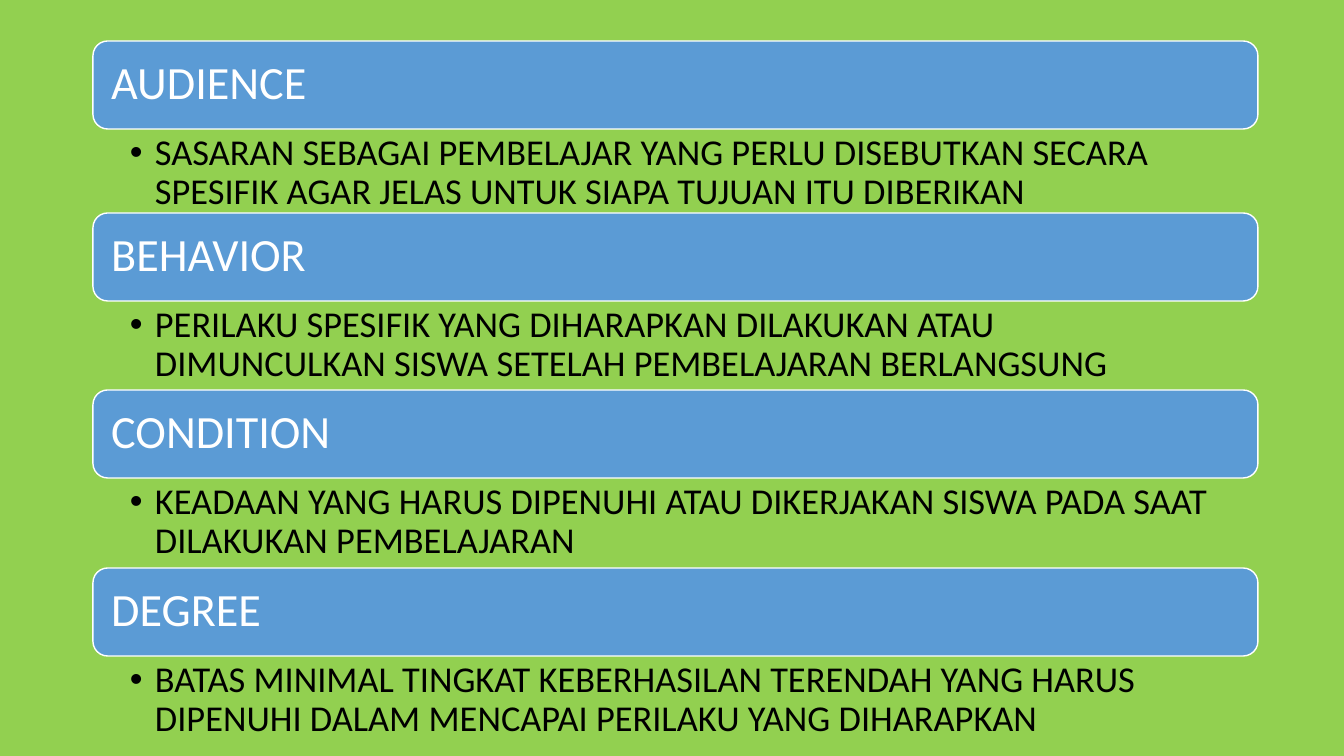
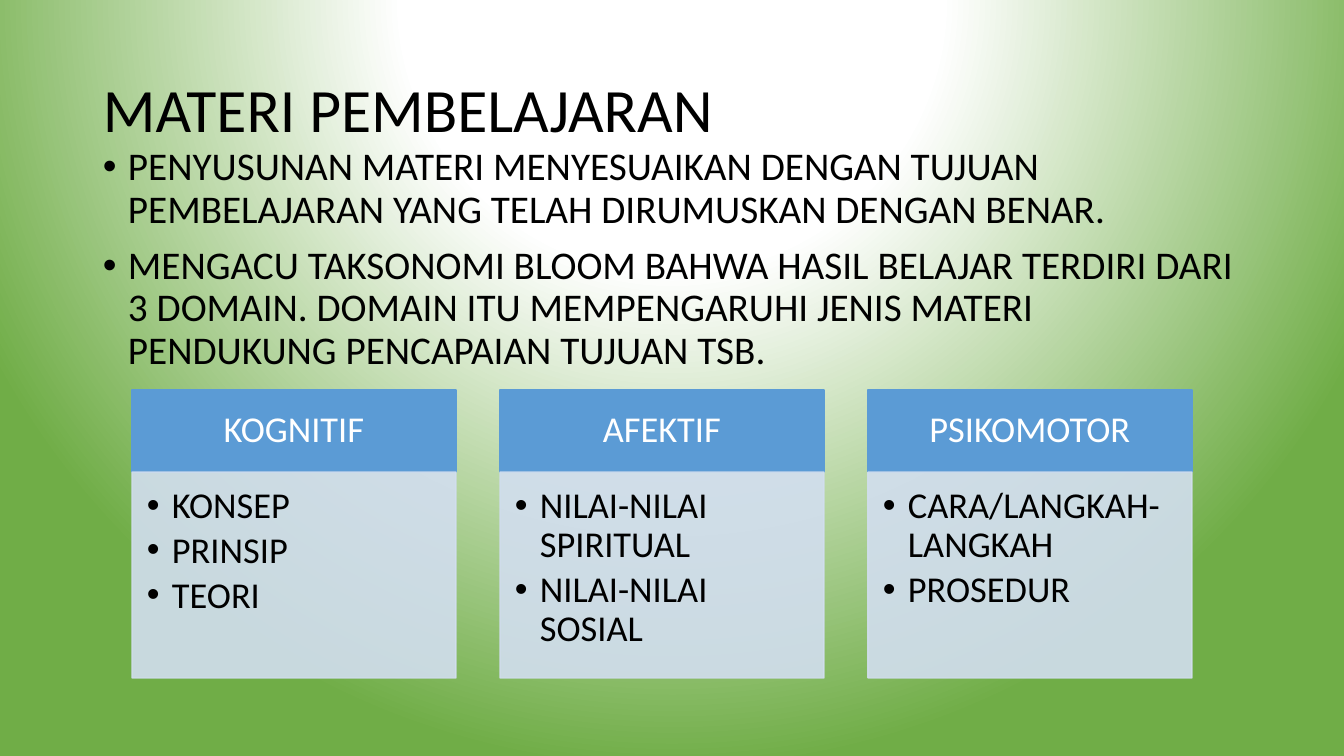
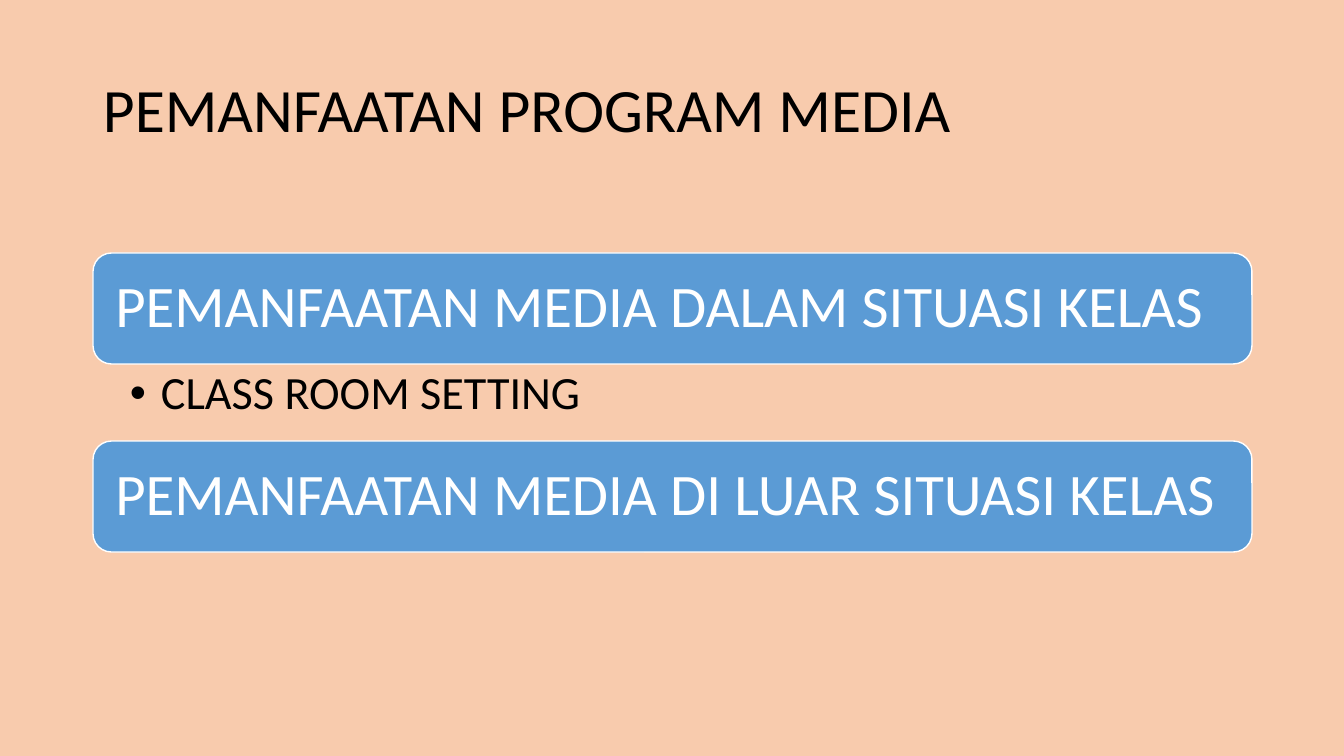
from lxml import etree
from pptx import Presentation
from pptx import util as u
from pptx.dml import color as c
from pptx.enum import shapes, text
from pptx.oxml import ns


class Theme:
    font = "Calibri"
    black = "000000"
    white = "FFFFFF"
    blue = "5B9BD5"
    pale_blue = "D2DEEF"
    lime = "92D050"
    green = "70AD47"
    peach = "F8CBAD"
    title_size = 44
    body_size = 28
    card_size = 26
    bar_size = 33
    large_bar_size = 42


def px(value):
    return u.Emu(round(value * 914400 / 100.8))


def write(shape, box, lines, size, color=Theme.black, fill=None, line=None, opacity=100,
          align=text.PP_ALIGN.LEFT, anchor=text.MSO_ANCHOR.TOP, insets=(10, 5, 10, 5),
          indent=0, before=0, after=0):
    shape.left, shape.top, shape.width, shape.height = map(px, box)
    if fill:
        shape.shadow.inherit = False
        shape.fill.solid()
        shape.fill.fore_color.rgb = c.RGBColor.from_string(fill)
        shape.line.color.rgb = c.RGBColor.from_string(line)
        shape.line.width = u.Pt(1)
        if opacity < 100:
            for color_element in shape.element.spPr.iter(ns.qn("a:srgbClr")):
                etree.SubElement(color_element, ns.qn("a:alpha"), val=str(opacity * 1000))
    frame = shape.text_frame
    frame.text = "\n".join(lines)
    frame.word_wrap = True
    frame.auto_size = text.MSO_AUTO_SIZE.NONE
    frame.vertical_anchor = anchor
    frame.margin_left, frame.margin_top, frame.margin_right, frame.margin_bottom = map(px, insets)
    for paragraph in frame.paragraphs:
        paragraph.alignment = align
        paragraph.line_spacing = 0.9
        paragraph.space_before = u.Pt(before)
        paragraph.space_after = u.Pt(after)
        font = paragraph.runs[0].font
        font.name = Theme.font
        font.size = u.Pt(size)
        font.color.rgb = c.RGBColor.from_string(color)
        if indent:
            properties = paragraph._p.get_or_add_pPr()
            properties.set("marL", str(px(indent)))
            properties.set("indent", str(-px(indent)))
            etree.SubElement(properties, ns.qn("a:buFont"), typeface="Arial")
            etree.SubElement(properties, ns.qn("a:buChar"), char="•")


presentation = Presentation()
presentation.slide_width = px(1344)
presentation.slide_height = px(756)
layouts = presentation.slide_layouts
objectives, materials, media = [
    presentation.slides.add_slide(layouts.get_by_name(name))
    for name in ("Blank", "Title and Content", "Title Only")
]

for slide, color in ((objectives, Theme.lime), (media, Theme.peach)):
    slide.background.fill.solid()
    slide.background.fill.fore_color.rgb = c.RGBColor.from_string(color)

materials.background.fill.gradient()
gradient = next(materials.element.iter(ns.qn("a:gradFill")))
gradient.clear()
gradient.set("rotWithShape", "1")
stops = etree.SubElement(gradient, ns.qn("a:gsLst"))
for position, color in ((0, Theme.white), (35, Theme.white), (100, Theme.green)):
    stop = etree.SubElement(stops, ns.qn("a:gs"), pos=str(position * 1000))
    etree.SubElement(stop, ns.qn("a:srgbClr"), val=color)
circle = etree.SubElement(gradient, ns.qn("a:path"), path="circle")
etree.SubElement(circle, ns.qn("a:fillToRect"), l="50000", t="-80000", r="50000", b="180000")

for slide, title in ((materials, "MATERI PEMBELAJARAN"), (media, "PEMANFAATAN PROGRAM MEDIA")):
    write(slide.shapes.title, (93, 40, 1159, 146), [title], Theme.title_size,
          anchor=text.MSO_ANCHOR.MIDDLE)

objective_bars = [
    (41, "AUDIENCE", "SASARAN SEBAGAI PEMBELAJAR YANG PERLU DISEBUTKAN SECARA SPESIFIK AGAR JELAS UNTUK SIAPA TUJUAN ITU DIBERIKAN"),
    (213, "BEHAVIOR", "PERILAKU SPESIFIK YANG DIHARAPKAN DILAKUKAN ATAU DIMUNCULKAN SISWA SETELAH PEMBELAJARAN BERLANGSUNG"),
    (390, "CONDITION", "KEADAAN YANG HARUS DIPENUHI ATAU DIKERJAKAN SISWA PADA SAAT DILAKUKAN PEMBELAJARAN"),
    (568, "DEGREE", "BATAS MINIMAL TINGKAT KEBERHASILAN TERENDAH YANG HARUS DIPENUHI DALAM MENCAPAI PERILAKU YANG DIHARAPKAN"),
]
media_bars = [
    (253, "PEMANFAATAN MEDIA DALAM SITUASI KELAS", "CLASS ROOM SETTING"),
    (441, "PEMANFAATAN MEDIA DI LUAR SITUASI KELAS", None),
]
bar_groups = [
    (objectives, objective_bars, 1165, 88, 14, Theme.bar_size, 91, (37, 5, 26, 5), 25, Theme.card_size),
    (media, media_bars, 1159, 111, 17, Theme.large_bar_size, 77, (37, 6, 33, 6), 31, Theme.bar_size),
]
for slide, bars, width, height, inset, size, detail_height, detail_insets, indent, detail_size in bar_groups:
    for top, heading, detail in bars:
        bar = slide.shapes.add_shape(shapes.MSO_SHAPE.ROUNDED_RECTANGLE, 0, 0, 0, 0)
        write(bar, (93, top, width, height), [heading], size, Theme.white,
              fill=Theme.blue, line=Theme.white, anchor=text.MSO_ANCHOR.MIDDLE, insets=(inset,) * 4)
        if detail:
            write(slide.shapes.add_textbox(0, 0, 0, 0), (93, top + height, width, detail_height),
                  [detail], detail_size, insets=detail_insets, indent=indent)

write(materials.placeholders[1], (93, 142, 1159, 538), [
    "PENYUSUNAN MATERI MENYESUAIKAN DENGAN TUJUAN PEMBELAJARAN YANG TELAH DIRUMUSKAN DENGAN BENAR.",
    "MENGACU TAKSONOMI BLOOM BAHWA HASIL BELAJAR TERDIRI DARI 3 DOMAIN. DOMAIN ITU MEMPENGARUHI JENIS MATERI PENDUKUNG PENCAPAIAN TUJUAN TSB.",
], Theme.body_size, indent=25, before=10)

domains = [
    ("KOGNITIF", ["KONSEP", "PRINSIP", "TEORI"]),
    ("AFEKTIF", ["NILAI-NILAI SPIRITUAL", "NILAI-NILAI SOSIAL"]),
    ("PSIKOMOTOR", ["CARA/LANGKAH-LANGKAH", "PROSEDUR"]),
]
for index, (domain, topics) in enumerate(domains):
    left = 132 + index * 368
    header, card = [materials.shapes.add_shape(shapes.MSO_SHAPE.RECTANGLE, 0, 0, 0, 0) for _ in range(2)]
    write(header, (left, 390, 324, 82), [domain], Theme.card_size, Theme.white,
          fill=Theme.blue, line=Theme.blue, align=text.PP_ALIGN.CENTER,
          anchor=text.MSO_ANCHOR.MIDDLE, insets=(20, 12, 20, 12))
    write(card, (left, 472, 324, 206), topics, Theme.card_size,
          fill=Theme.pale_blue, line=Theme.pale_blue, opacity=90,
          insets=(15, 15, 20, 23), indent=25, after=4)

presentation.save("out.pptx")
